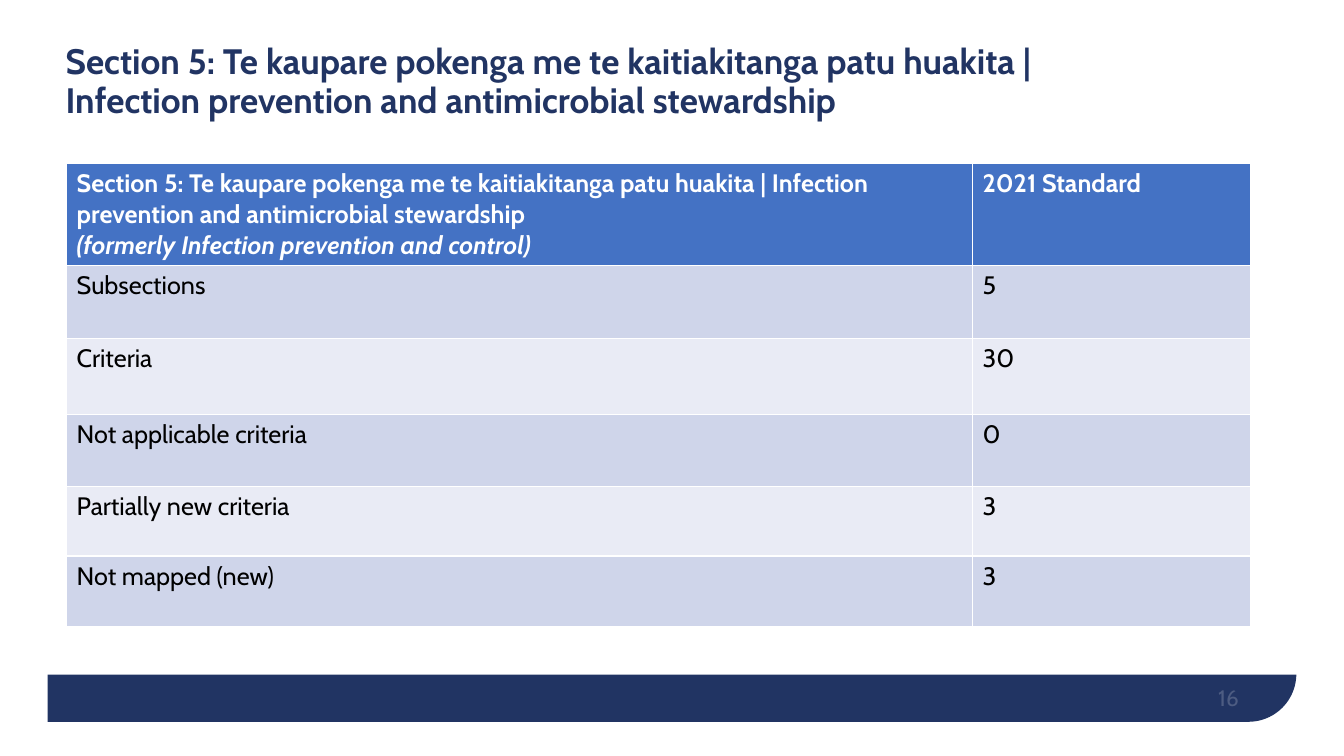
from pptx import Presentation
from pptx.dml.color import RGBColor
from pptx.enum import shapes, text
from pptx.oxml import parse_xml
from pptx.oxml.ns import nsdecls
from pptx.util import Cm, Pt

COLOURS = {
    "navy": "213463", "white": "FFFFFF", "black": "000000",
    "header": "4472C4", "band_dark": "CFD5EA", "band_light": "E9EBF5",
}
FONT = "Cabin"
SECTION = ("Section 5: Te kaupare pokenga me te kaitiakitanga patu huakita | "
           "Infection prevention and antimicrobial stewardship")
HEADER = [SECTION + "\n(formerly Infection prevention and control)", "2021 Standard"]
COUNTS = [
    ("Subsections", "5"),
    ("Criteria", "30"),
    ("Not applicable criteria", "0"),
    ("Partially new criteria", "3"),
    ("Not mapped (new)", "3"),
]


def colour(name):
    return RGBColor.from_string(COLOURS[name])


def format_runs(paragraph, size, colour_name, bold=False, italic=False):
    for run in paragraph.runs:
        run.font.name = FONT
        run.font.size = Pt(size)
        run.font.bold = bold
        run.font.italic = italic
        run.font.color.rgb = colour(colour_name)


def add_panel(slide, kind, fill, left, top, width, height):
    """Add a plain filled shape behind everything placed so far."""
    panel = slide.shapes.add_shape(kind, left, top, width, height)
    panel.shadow.inherit = False
    panel.fill.solid()
    panel.fill.fore_color.rgb = colour(fill)
    panel.line.fill.background()
    slide.shapes._spTree.insert(2, panel._element)
    return panel


def add_footer(slide, left, top, width, bottom, number):
    """Show the foot of a tall rounded panel below a white page area."""
    page_width = Cm(33.87)
    add_panel(slide, shapes.MSO_SHAPE.RECTANGLE, "white", 0, 0, page_width, top)
    panel_top = Cm(0.94)
    panel = add_panel(slide, shapes.MSO_SHAPE.ROUND_1_RECTANGLE, "navy",
                      left, panel_top, width, bottom - panel_top)
    panel.adjustments[0] = 0.07
    panel._element.spPr.xfrm.set("flipV", "1")

    box_width = Cm(7.62)
    box = slide.shapes.add_textbox(left + width - Cm(1.45) - box_width,
                                   top - Cm(0.1), box_width, Cm(1.02))
    frame = box.text_frame
    frame.margin_left = frame.margin_right = frame.margin_top = frame.margin_bottom = 0
    frame.word_wrap = True
    frame.vertical_anchor = text.MSO_ANCHOR.BOTTOM
    frame.text = number
    paragraph = frame.paragraphs[0]
    paragraph.alignment = text.PP_ALIGN.RIGHT
    format_runs(paragraph, 16, "white")
    fill = paragraph.runs[0].font._element.solidFill
    fill[0].append(parse_xml(f'<a:alpha {nsdecls("a")} val="20000"/>'))


def add_title(slide, left, top, width, height):
    title = slide.shapes.title
    title.left, title.top, title.width, title.height = left, top, width, height
    frame = title.text_frame
    frame.text = SECTION
    frame.word_wrap = True
    frame.auto_size = text.MSO_AUTO_SIZE.NONE
    frame.vertical_anchor = text.MSO_ANCHOR.TOP
    frame.margin_top = 0
    paragraph = frame.paragraphs[0]
    paragraph.alignment = text.PP_ALIGN.LEFT
    paragraph.line_spacing = 0.9
    format_runs(paragraph, 25.2, "navy", bold=True)


def add_counts_table(slide, left, top, column_widths, row_heights):
    rows = [HEADER, *COUNTS]
    table = slide.shapes.add_table(len(rows), len(column_widths), left, top,
                                   sum(column_widths), sum(row_heights)).table
    for column, width in zip(table.columns, column_widths):
        column.width = width
    for row, height in zip(table.rows, row_heights):
        row.height = height
    for row_index, values in enumerate(rows):
        is_header = row_index == 0
        band = "header" if is_header else "band_dark" if row_index % 2 else "band_light"
        for column_index, value in enumerate(values):
            cell = table.cell(row_index, column_index)
            cell.fill.solid()
            cell.fill.fore_color.rgb = colour(band)
            cell.text_frame.text = value
            for line, paragraph in enumerate(cell.text_frame.paragraphs):
                format_runs(paragraph, 18, "white" if is_header else "black",
                            bold=is_header, italic=line > 0)


def main():
    presentation = Presentation()
    presentation.slide_width, presentation.slide_height = Cm(33.87), Cm(19.05)
    slide = presentation.slides.add_slide(presentation.slide_layouts[5])
    add_footer(slide, Cm(1.2), Cm(17), Cm(31.47), Cm(18.19), "16")
    add_title(slide, Cm(1.4), Cm(1.12), Cm(27.76), Cm(2.97))
    add_counts_table(slide, Cm(1.68), Cm(4.12), [Cm(22.83), Cm(7.01)],
                     [Cm(height) for height in (2.56, 1.85, 1.91, 1.82, 1.75, 1.78)])
    presentation.save("out.pptx")


if __name__ == "__main__":
    main()
